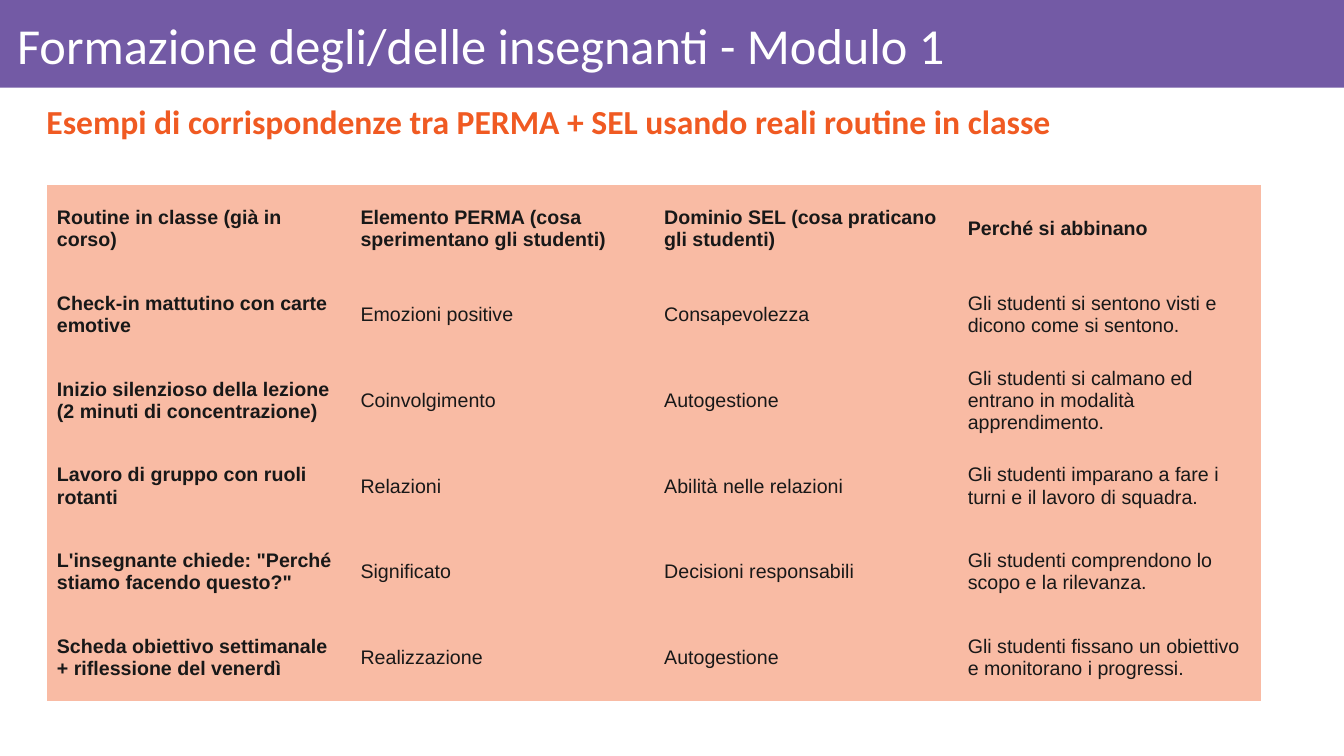
import pptx
import pptx.dml.color
import pptx.enum.shapes
import pptx.enum.text
import pptx.oxml.ns
import pptx.util

Cm = pptx.util.Cm
Pt = pptx.util.Pt
RGBColor = pptx.dml.color.RGBColor
MIDDLE = pptx.enum.text.MSO_ANCHOR.MIDDLE

PURPLE = RGBColor(0x73, 0x5A, 0xA5)
ORANGE = RGBColor(0xF0, 0x5A, 0x22)
SALMON = RGBColor(0xF9, 0xBB, 0xA4)
INK = RGBColor(0x18, 0x18, 0x18)
WHITE = RGBColor(0xFF, 0xFF, 0xFF)

NO_STYLE_NO_GRID = "{2D5ABB26-0587-4C30-8999-92F81FD0307C}"

ROUTINES = [
    ("Routine in classe (già in corso)", "Elemento PERMA (cosa sperimentano gli studenti)",
     "Dominio SEL (cosa praticano gli studenti)", "Perché si abbinano"),
    ("Check-in mattutino con carte emotive", "Emozioni positive", "Consapevolezza",
     "Gli studenti si sentono visti e dicono come si sentono."),
    ("Inizio silenzioso della lezione (2 minuti di concentrazione)", "Coinvolgimento",
     "Autogestione", "Gli studenti si calmano ed entrano in modalità apprendimento."),
    ("Lavoro di gruppo con ruoli rotanti", "Relazioni", "Abilità nelle relazioni",
     "Gli studenti imparano a fare i turni e il lavoro di squadra."),
    ("L'insegnante chiede: \"Perché stiamo facendo questo?\"", "Significato",
     "Decisioni responsabili", "Gli studenti comprendono lo scopo e la rilevanza."),
    ("Scheda obiettivo settimanale + riflessione del venerdì", "Realizzazione",
     "Autogestione", "Gli studenti fissano un obiettivo e monitorano i progressi."),
]


def add_run(p, text, font, size, color, bold=False):
    """Append one formatted run to a paragraph."""
    r = p.add_run()
    r.text = text
    r.font.name = font
    r.font.size = Pt(size)
    r.font.color.rgb = color
    r.font.bold = bold


def add_line(s, left, top, width, height, inset):
    """Add a middle-anchored text box and return its paragraph."""
    tf = s.shapes.add_textbox(left, top, width, height).text_frame
    tf.word_wrap = True
    tf.vertical_anchor = MIDDLE
    tf.margin_left = inset
    p = tf.paragraphs[0]
    p.line_spacing = 0.9
    return p


def add_header(s, left, top, width, height):
    """Draw the purple band with the module title."""
    sp = s.shapes.add_shape(pptx.enum.shapes.MSO_SHAPE.RECTANGLE, left, top, width, height)
    sp.shadow.inherit = False
    sp.fill.solid()
    sp.fill.fore_color.rgb = PURPLE
    sp.line.fill.background()
    p = add_line(s, left + Cm(0.28), top + Cm(0.23), width - Cm(0.7), height - Cm(0.23), Cm(0.15))
    add_run(p, "Formazione degli/delle insegnanti - Modulo 1", "Calibri", 36, WHITE)


def add_subtitle(s, left, top, width, height):
    """Write the orange heading above the table."""
    p = add_line(s, left, top, width, height, Cm(0.89))
    p.alignment = pptx.enum.text.PP_ALIGN.JUSTIFY
    p.space_before = Pt(10)
    add_run(p, "Esempi di corrispondenze tra PERMA + SEL usando reali routine in classe",
            "Calibri", 24, ORANGE, bold=True)


def add_routines(s, left, top, width, height):
    """Build the table of routines, bold in its first row and column."""
    table = s.shapes.add_table(len(ROUTINES), len(ROUTINES[0]), left, top, width, height).table
    table.horz_banding = False
    table.first_row = False
    table._tbl.tblPr.find(pptx.oxml.ns.qn("a:tableStyleId")).text = NO_STYLE_NO_GRID
    for i, row in enumerate(ROUTINES):
        for j, text in enumerate(row):
            cell = table.cell(i, j)
            cell.fill.solid()
            cell.fill.fore_color.rgb = SALMON
            cell.vertical_anchor = MIDDLE
            add_run(cell.text_frame.paragraphs[0], text, "Arial", 14, INK, bold=i == 0 or j == 0)


def main():
    """Build and save the slide."""
    prs = pptx.Presentation()
    prs.slide_width = Cm(33.87)
    prs.slide_height = Cm(19.05)
    s = prs.slides.add_slide(prs.slide_layouts[6])
    add_header(s, Cm(0), Cm(0), prs.slide_width, Cm(2.21))
    add_subtitle(s, Cm(0.28), Cm(2.36), Cm(33.17), Cm(1.52))
    add_routines(s, Cm(1.18), Cm(4.67), Cm(30.61), Cm(13))
    prs.save("out.pptx")


if __name__ == "__main__":
    main()
